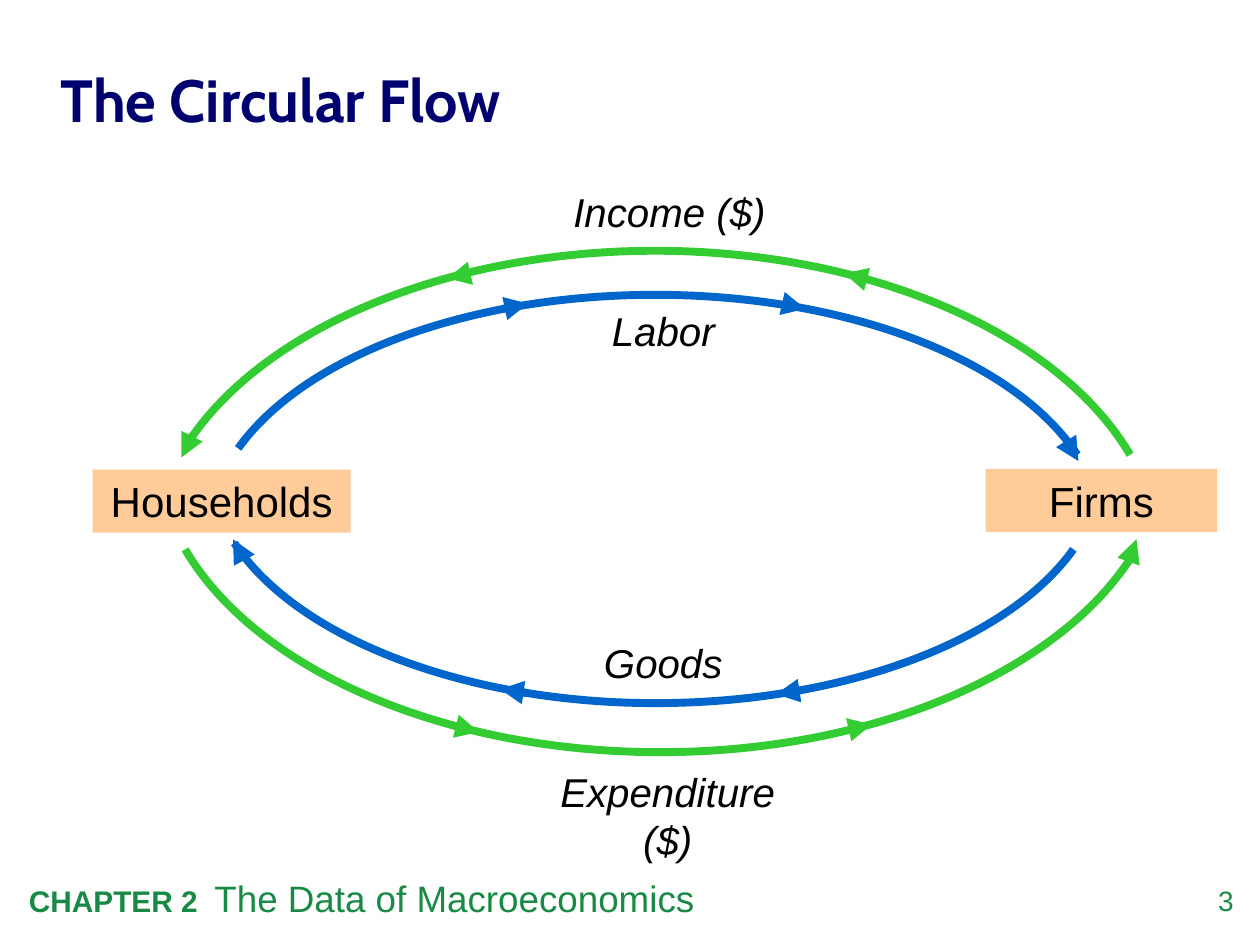
from lxml import etree
from pptx import Presentation
from pptx.dml.color import RGBColor
from pptx.enum.shapes import MSO_CONNECTOR, MSO_SHAPE
from pptx.enum.text import MSO_ANCHOR, PP_ALIGN
from pptx.oxml.ns import qn
from pptx.util import Pt

LEFT, CENTER, RIGHT = PP_ALIGN.LEFT, PP_ALIGN.CENTER, PP_ALIGN.RIGHT
TOP, MIDDLE = MSO_ANCHOR.TOP, MSO_ANCHOR.MIDDLE
STRAIGHT, RECTANGLE = MSO_CONNECTOR.STRAIGHT, MSO_SHAPE.RECTANGLE

BLACK = RGBColor(0, 0, 0)
NAVY = RGBColor(0x00, 0x00, 0x6E)
FOOTER_GREEN = RGBColor(0x19, 0x8A, 0x46)
PEACH = RGBColor(0xFF, 0xCC, 0x99)
BLUE = RGBColor(0x00, 0x66, 0xCC)
GREEN = RGBColor(0x33, 0xCC, 0x33)
LINE_WIDTH = Pt(4.5)


def write_text(shape, runs, color, align=LEFT, anchor=TOP, inset=True, font="Arial"):
    frame = shape.text_frame
    frame.word_wrap = True
    frame.vertical_anchor = anchor
    if not inset:
        frame.margin_left = frame.margin_right = 0
        frame.margin_top = frame.margin_bottom = 0
    paragraph = frame.paragraphs[0]
    paragraph.alignment = align
    for text, size, bold, italic in runs:
        run = paragraph.add_run()
        run.text = text
        run.font.name = font
        run.font.size = Pt(size)
        run.font.bold = bold
        run.font.italic = italic
        run.font.color.rgb = color
    return paragraph


def add_arc(shapes, points, color):
    corners = [(Pt(x), Pt(y)) for x, y in points]
    builder = shapes.build_freeform(*corners[0], scale=1.0)
    builder.add_line_segments(corners[1:], close=False)
    arc = builder.convert_to_shape()
    arc.shadow.inherit = False
    arc.fill.background()
    arc.line.color.rgb = color
    arc.line.width = LINE_WIDTH
    outline = next(arc.element.iter(qn("a:path")))
    segments = outline.findall(qn("a:lnTo"))
    for start in range(0, len(segments), 3):
        curve = etree.SubElement(outline, qn("a:cubicBezTo"))
        for segment in segments[start:start + 3]:
            curve.append(segment[0])
            outline.remove(segment)


presentation = Presentation()
presentation.slide_width = Pt(720)
presentation.slide_height = Pt(540)
slide = presentation.slides.add_slide(presentation.slide_layouts[6])
shapes = slide.shapes

page_number = shapes.add_textbox(Pt(665.3), Pt(504.7), Pt(39.6), Pt(23))
write_text(page_number, [("3", 16, False, False)], FOOTER_GREEN, RIGHT, inset=False)

footer = shapes.add_textbox(Pt(9.4), Pt(496.8), Pt(589), Pt(32.4))
write_text(footer, [("CHAPTER 2  ", 17, True, False),
                    ("The Data of Macroeconomics", 21, False, False)], FOOTER_GREEN)

title = shapes.add_textbox(Pt(34.6), Pt(23.8), Pt(685.4), Pt(63.4))
title_paragraph = write_text(title, [("The Circular Flow", 34, True, False)], NAVY,
                             anchor=MIDDLE, inset=False, font="Cabin")
title_paragraph.line_spacing = 1.05

for name, left, top, width in [("Households", 52.9, 268.4, 147.5),
                               ("Firms", 563.2, 268, 132.4)]:
    box = shapes.add_shape(RECTANGLE, Pt(left), Pt(top), Pt(width), Pt(36))
    box.shadow.inherit = False
    box.fill.solid()
    box.fill.fore_color.rgb = PEACH
    box.line.fill.background()
    write_text(box, [(name, 24, False, False)], BLACK, CENTER)

flows = [
    ("Goods", (310.3, 361.4, 137.5), BLUE,
     [(613.4, 313.9), (575.3, 367.2), (480.2, 401.8), (374.4, 401.8),
      (266.4, 401.8), (169.9, 365), (133.9, 310.3)],
     [(139, 319, 133.2, 308.2), (301, 396, 285.8, 393.8), (457.2, 394.6, 443.5, 396.7)]),
    ("Labor", (310.3, 171.4, 137.5), BLUE,
     [(136.1, 256.3), (174.2, 203), (268.6, 168.5), (374.4, 168.5),
      (482.4, 168.5), (578.9, 204.5), (615.6, 259.9)],
     [(288, 176.4, 301.7, 173.5), (447.1, 173.5, 460.1, 176.4), (610.6, 254.2, 616.3, 263.5)]),
    ("Expenditure ($)", (295.9, 434.9, 171.4), GREEN,
     [(646.6, 318.2), (603.4, 385.2), (496.8, 429.8), (377.3, 429.8),
      (255.6, 429.8), (146.9, 383.8), (105.8, 313.9)],
     [(645.1, 320.4, 649.4, 308.2), (259.2, 414.7, 273.6, 418.3), (485.3, 416.9, 498.2, 414)]),
    ("Income ($)", (313.9, 103.7, 137.5), GREEN,
     [(105.8, 255.6), (148.3, 187.9), (255.6, 143.3), (374.4, 143.3),
      (496.1, 143.3), (604.8, 190.1), (645.8, 259.9)],
     [(496.1, 159.8, 482.4, 156.2), (268.6, 156.2, 255.6, 159.1), (110.2, 248.4, 103.7, 261.4)]),
]

for name, (left, top, width), color, arc_points, arrows in flows:
    label = shapes.add_textbox(Pt(left), Pt(top), Pt(width), Pt(34.6))
    write_text(label, [(name, 23, False, True)], BLACK, CENTER)
    add_arc(shapes, arc_points, color)
    for ends in arrows:
        arrow = shapes.add_connector(STRAIGHT, *[Pt(value) for value in ends])
        arrow.line.color.rgb = color
        arrow.line.width = LINE_WIDTH
        etree.SubElement(arrow.line._get_or_add_ln(), qn("a:tailEnd"), type="triangle")
        etree.SubElement(arrow.element.spPr, qn("a:effectLst"))

presentation.save("out.pptx")
